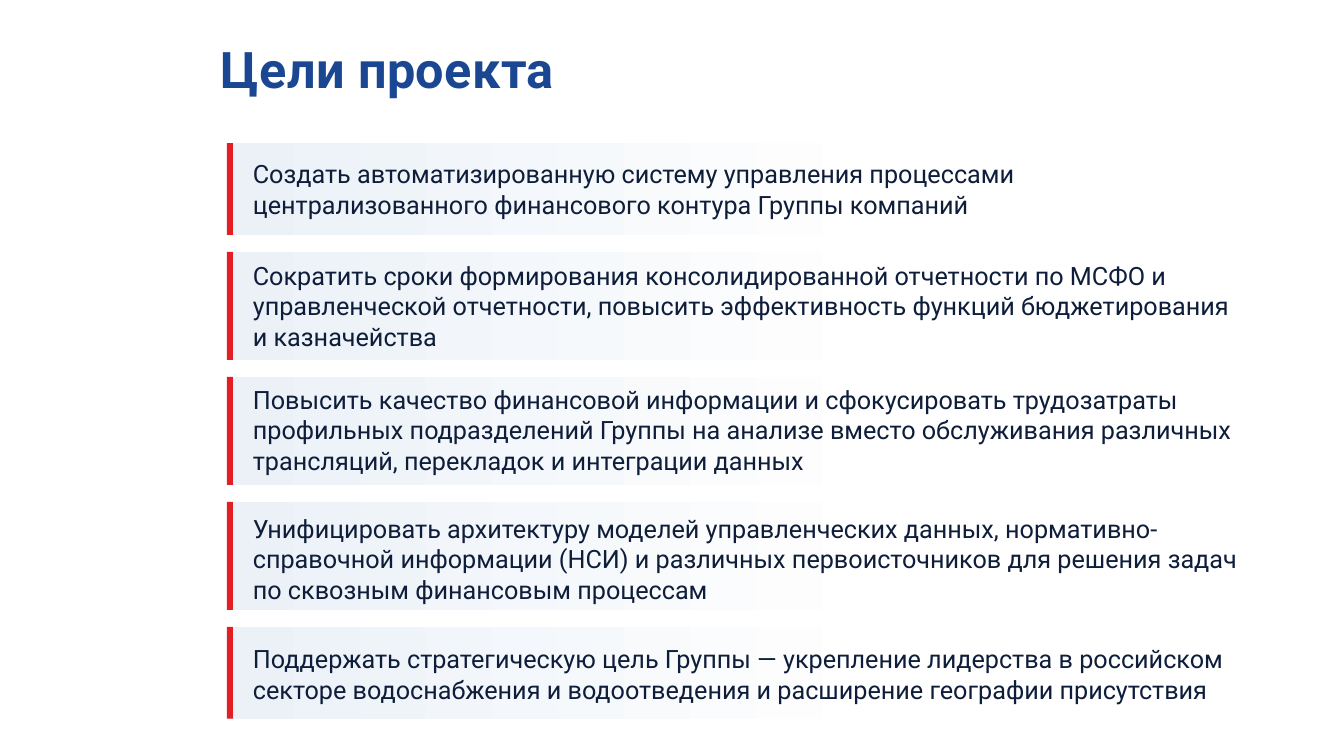
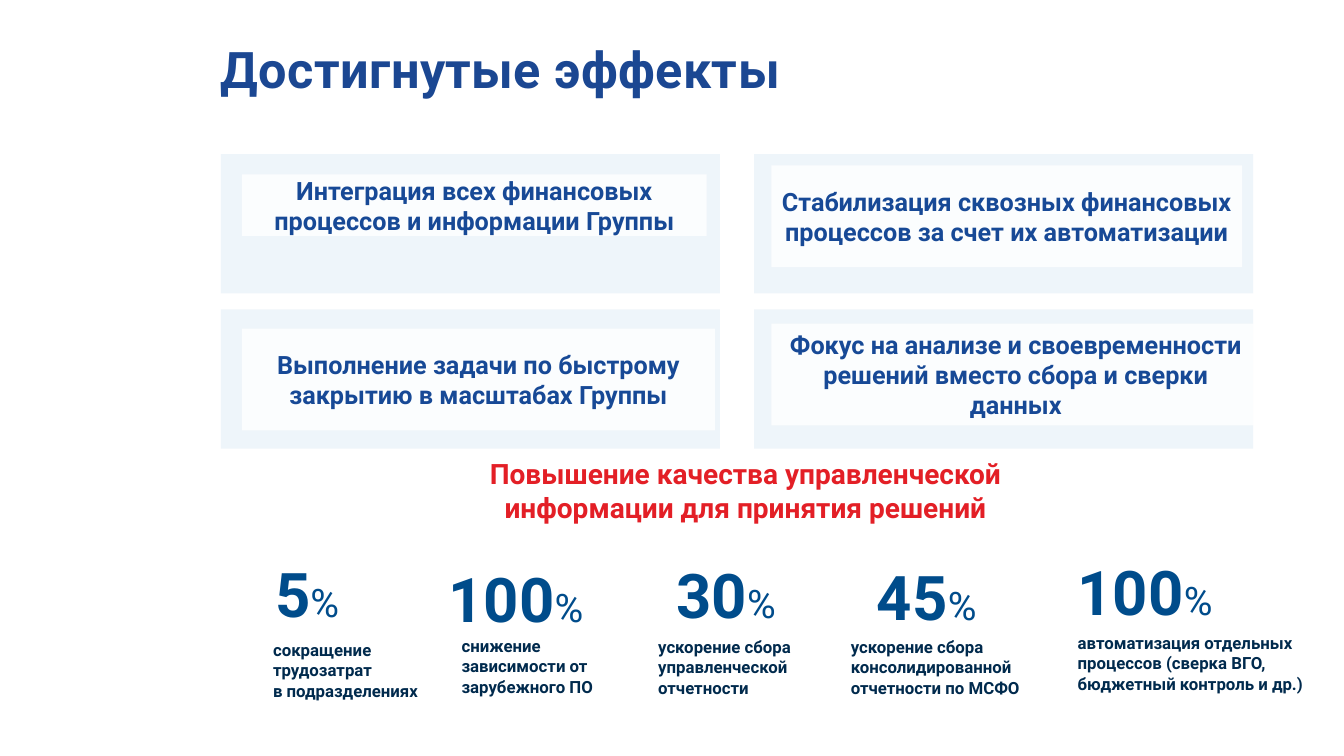
from pptx import Presentation
from pptx.dml.color import RGBColor
from pptx.enum.shapes import MSO_SHAPE
from pptx.enum.text import MSO_ANCHOR, PP_ALIGN
from pptx.oxml.ns import qn
from pptx.util import Inches, Pt
from lxml import etree

RECTANGLE = MSO_SHAPE.RECTANGLE
TOP, MIDDLE = MSO_ANCHOR.TOP, MSO_ANCHOR.MIDDLE
LEFT, CENTER = PP_ALIGN.LEFT, PP_ALIGN.CENTER

FONT = "Roboto"
COLORS = {
    "title": "1B4792",
    "goal": "0E1D3A",
    "band": "EBF1F7",
    "white": "FFFFFF",
    "red": "E31F26",
    "card": "7BAED8",
    "card_text": "174996",
    "number": "004C8B",
    "caption": "002A4D",
}
TITLE_BOX = (2.19, 0.45, 8.12, 0.93)

GOALS = [
    (0.91, 0, "Создать автоматизированную систему управления процессами "
     "централизованного финансового контура Группы компаний"),
    (1.07, 0, "Сократить сроки формирования консолидированной отчетности по МСФО и "
     "управленческой отчетности, повысить эффективность функций бюджетирования "
     "и казначейства"),
    (1.07, -0.01, "Повысить качество финансовой информации и сфокусировать трудозатраты "
     "профильных подразделений Группы на анализе вместо обслуживания различных "
     "трансляций, перекладок и интеграции данных"),
    (1.07, 0.03, "Унифицировать архитектуру моделей управленческих данных, "
     "нормативно-справочной информации (НСИ) и различных первоисточников для "
     "решения задач по сквозным финансовым процессам"),
    (0.91, 0.01, "Поддержать стратегическую цель Группы — укрепление лидерства в российском "
     "секторе водоснабжения и водоотведения и расширение географии присутствия"),
]
EFFECTS = [
    ((0.21, 0.2, 4.61, 0.61), "Интеграция всех финансовых процессов и информации Группы"),
    ((0.17, 0.11, 4.67, 1.01),
     "Стабилизация сквозных финансовых процессов за счет их автоматизации"),
    ((0.21, 0.19, 4.69, 1.01), "Выполнение задачи по быстрому закрытию в масштабах Группы"),
    ((0.17, 0.14, 4.85, 1.01),
     "Фокус на анализе и своевременности решений вместо сбора и сверки данных"),
]
METRICS = [
    ((2.63, 5.47, 1.17, 0.84), (2.61, 6.3, 2, 0.71), "5",
     "сокращение трудозатрат\nв подразделениях"),
    ((4.35, 5.52, 1.96, 0.84), (4.48, 6.26, 1.94, 0.71), "100",
     "снижение зависимости от зарубежного ПО"),
    ((6.61, 5.48, 1.56, 0.84), (6.43, 6.27, 2.16, 0.71), "30",
     "ускорение сбора управленческой отчетности"),
    ((8.6, 5.5, 1.56, 0.84), (8.34, 6.27, 2.32, 0.71), "45",
     "ускорение сбора консолидированной отчетности по МСФО"),
    ((10.59, 5.45, 1.96, 0.84), (10.59, 6.23, 2.75, 0.71), "100",
     "автоматизация отдельных процессов (сверка ВГО, бюджетный контроль и др.)"),
]


def inches(box):
    """Convert a box of numbers to lengths."""
    return [Inches(value) for value in box]


def add_run(paragraph, text, size, color, bold=False, spacing=None):
    """Append formatted text, turning newlines into line breaks."""
    for index, line in enumerate(text.split("\n")):
        if index:
            paragraph.add_line_break()
        run = paragraph.add_run()
        run.text = line
        run.font.name = FONT
        run.font.size = Pt(size)
        run.font.bold = bold
        run.font.color.rgb = RGBColor.from_string(COLORS[color])
        if spacing:
            run.font._element.set("spc", str(spacing))


def write_text(shape, text, align=LEFT, anchor=TOP, inset=True, **run_format):
    """Write one formatted paragraph into a shape and return it."""
    frame = shape.text_frame
    frame.word_wrap = True
    frame.vertical_anchor = anchor
    if not inset:
        frame.margin_left = frame.margin_right = 0
        frame.margin_top = frame.margin_bottom = 0
    paragraph = frame.paragraphs[0]
    paragraph.alignment = align
    add_run(paragraph, text, **run_format)
    return paragraph


def add_text(slide, box, text, **text_format):
    """Add a text box and return its paragraph."""
    return write_text(slide.shapes.add_textbox(*inches(box)), text, **text_format)


def add_rectangle(slide, box, color, opacity=100):
    """Add a plain rectangle with optional transparency."""
    shape = slide.shapes.add_shape(RECTANGLE, *inches(box))
    shape.shadow.inherit = False
    shape.line.fill.background()
    shape.fill.solid()
    shape.fill.fore_color.rgb = RGBColor.from_string(COLORS[color])
    if opacity < 100:
        color_element = shape.element.spPr.find(".//" + qn("a:srgbClr"))
        etree.SubElement(color_element, qn("a:alpha")).set("val", str(opacity * 1000))
    return shape


def add_titled_slide(presentation, title):
    """Add a slide with the shared title style."""
    slide = presentation.slides.add_slide(presentation.slide_layouts[5])
    shape = slide.shapes.title
    shape.left, shape.top, shape.width, shape.height = inches(TITLE_BOX)
    paragraph = write_text(shape, title, inset=False, size=36, color="title",
                           bold=True, spacing=30)
    paragraph.line_spacing = 0.9
    return slide


def add_goal(slide, box, text, text_shift):
    """Add a fading band with a red edge and its goal."""
    left, top, width, height = box
    band = add_rectangle(slide, box, "band")
    band.fill.gradient()
    band.fill.gradient_angle = 0
    for stop, position, color in zip(band.fill.gradient_stops, (0, 0.73), ("band", "white")):
        stop.position = position
        stop.color.rgb = RGBColor.from_string(COLORS[color])
    add_rectangle(slide, (left, top, 0.06, height), "red")
    add_text(slide, (left + 0.16, top + text_shift, width + 0.98, height), text,
             anchor=MIDDLE, size=18, color="goal")


def add_effect(slide, box, label_box, text):
    """Add a tinted card with a pale label placed inside it."""
    left, top = box[:2]
    add_rectangle(slide, box, "card", opacity=12)
    label_left, label_top, width, height = label_box
    label = add_rectangle(slide, (left + label_left, top + label_top, width, height),
                          "white", opacity=82)
    write_text(label, text, align=CENTER, anchor=MIDDLE, size=18, color="card_text", bold=True)


def add_metric(slide, number_box, caption_box, number, caption):
    """Add a large percentage and its caption."""
    paragraph = add_text(slide, number_box, number, size=44, color="number", bold=True)
    add_run(paragraph, "%", size=28, color="number")
    add_text(slide, caption_box, caption, size=12, color="caption", bold=True)


def build_goals_slide(presentation):
    """Build the slide of project goals."""
    slide = add_titled_slide(presentation, "Цели проекта")
    top, gap = 1.42, 0.17
    for height, text_shift, text in GOALS:
        add_goal(slide, (2.25, top, 8.99, height), text, text_shift)
        top += height + gap


def build_effects_slide(presentation):
    """Build the slide of achieved effects."""
    slide = add_titled_slide(presentation, "Достигнутые эффекты")
    for index, (label_box, text) in enumerate(EFFECTS):
        row, column = divmod(index, 2)
        add_effect(slide, (2.19 + column * 5.29, 1.53 + row * 1.54, 4.95, 1.38),
                   label_box, text)
    add_text(slide, (4.29, 4.53, 6.21, 0.67),
             "Повышение качества управленческой информации для принятия решений",
             align=CENTER, inset=False, size=20, color="red", bold=True)
    for metric in METRICS:
        add_metric(slide, *metric)


def main():
    """Build and save the presentation."""
    presentation = Presentation()
    presentation.slide_width = Inches(13.33)
    presentation.slide_height = Inches(7.5)
    build_goals_slide(presentation)
    build_effects_slide(presentation)
    presentation.save("out.pptx")


if __name__ == "__main__":
    main()
